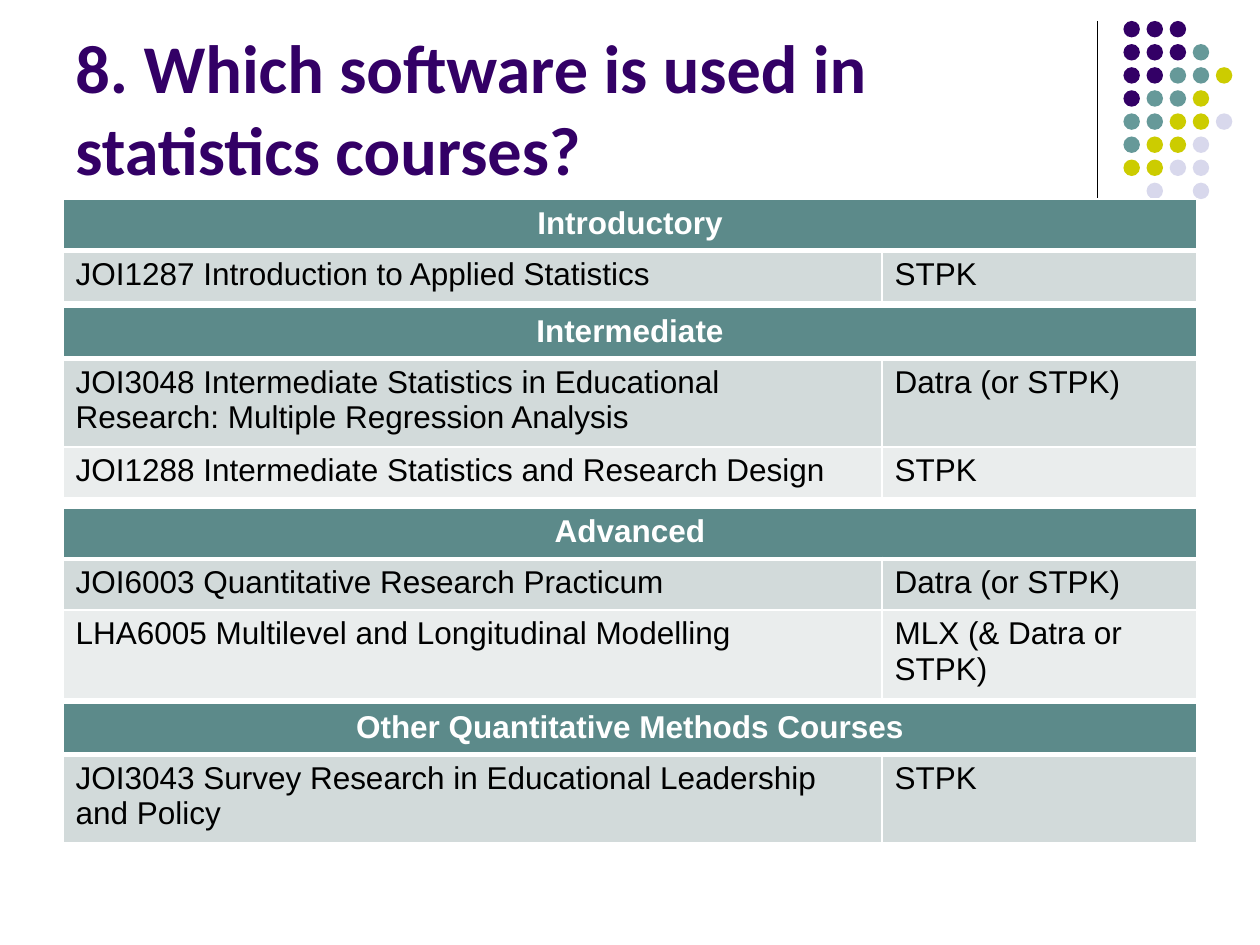
from lxml import etree
from pptx import Presentation
from pptx import util as u
from pptx.dml.color import RGBColor
from pptx.enum import shapes, text
from pptx.oxml import ns

PURPLE = RGBColor(0x33, 0x00, 0x66)
TEAL = RGBColor(0x66, 0x99, 0x99)
OLIVE = RGBColor(0xCC, 0xCC, 0x00)
LAVENDER = RGBColor(0xD8, 0xD8, 0xEC)
HEADER = RGBColor(0x5C, 0x8A, 0x8A)
BANDS = (RGBColor(0xD2, 0xDA, 0xDA), RGBColor(0xEA, 0xED, 0xED))
BLACK = RGBColor(0, 0, 0)
WHITE = RGBColor(255, 255, 255)

DOT_COLORS = {"P": PURPLE, "T": TEAL, "O": OLIVE, "L": LAVENDER}
DOT_ROWS = ("PPP", "PPPT", "PPTTO", "PTTO", "TTOOL", "TOOL", "OOLL", " L L")

COURSES = (
    (113.8, 58.3, "Introductory", (
        ("JOI1287 Introduction to Applied Statistics", "STPK"),
    )),
    (175.7, 108.7, "Intermediate", (
        ("JOI3048 Intermediate Statistics in Educational Research: "
         "Multiple Regression Analysis", "Datra (or STPK)"),
        ("JOI1288 Intermediate Statistics and Research Design", "STPK"),
    )),
    (290.2, 108.7, "Advanced", (
        ("JOI6003 Quantitative Research Practicum", "Datra (or STPK)"),
        ("LHA6005 Multilevel and Longitudinal Modelling",
         "MLX (& Datra or STPK)"),
    )),
    (401.8, 79.9, "Other Quantitative Methods Courses", (
        ("JOI3043 Survey Research in Educational Leadership and Policy",
         "STPK"),
    )),
)


def write_text(frame, content, font="Arial", size=18, color=BLACK, bold=False,
               align=text.PP_ALIGN.LEFT):
    paragraph = frame.paragraphs[0]
    paragraph.alignment = align
    run = paragraph.add_run()
    run.text = content
    run.font.name = font
    run.font.size = u.Pt(size)
    run.font.color.rgb = color
    run.font.bold = bold


def set_borders(cell, top=1, bottom=1):
    properties = cell._tc.get_or_add_tcPr()
    for side, width in (("L", 1), ("R", 1), ("T", top), ("B", bottom)):
        line = etree.SubElement(properties, ns.qn("a:ln" + side),
                                w=str(u.Pt(width)))
        fill = etree.SubElement(line, ns.qn("a:solidFill"))
        etree.SubElement(fill, ns.qn("a:srgbClr"), val=str(WHITE))


class SlideBuilder:
    title_font = "Calibri"
    row_height = 29.2
    column_widths = (468, 180)

    def __init__(self, slide):
        self.slide = slide

    def line(self, x1, y1, x2, y2):
        connector = self.slide.shapes.add_connector(
            shapes.MSO_CONNECTOR.STRAIGHT,
            u.Pt(x1), u.Pt(y1), u.Pt(x2), u.Pt(y2))
        connector.line.color.rgb = BLACK
        connector.line.width = u.Pt(0.75)
        etree.SubElement(connector._element.spPr, ns.qn("a:effectLst"))

    def dots(self, left, top, pitch, size):
        group = self.slide.shapes.add_group_shape()
        for row, codes in enumerate(DOT_ROWS):
            for column, code in enumerate(codes):
                if code == " ":
                    continue
                dot = group.shapes.add_shape(
                    shapes.MSO_SHAPE.OVAL,
                    u.Pt(left + column * pitch), u.Pt(top + row * pitch),
                    u.Pt(size), u.Pt(size))
                dot.shadow.inherit = False
                dot.fill.solid()
                dot.fill.fore_color.rgb = DOT_COLORS[code]
                dot.line.fill.background()

    def title(self, content, left, top, width, height):
        box = self.slide.shapes.add_textbox(
            u.Pt(left), u.Pt(top), u.Pt(width), u.Pt(height))
        box.text_frame.word_wrap = True
        box.text_frame.vertical_anchor = text.MSO_ANCHOR.BOTTOM
        write_text(box.text_frame, content, font=self.title_font, size=39,
                   color=PURPLE, bold=True)

    def course_table(self, left, top, height, level, courses):
        shape = self.slide.shapes.add_table(
            len(courses) + 1, 2, u.Pt(left), u.Pt(top),
            u.Pt(sum(self.column_widths)), u.Pt(height))
        table = shape.table
        for column, width in zip(table.columns, self.column_widths):
            column.width = u.Pt(width)
        for row in table.rows:
            row.height = u.Pt(self.row_height)
        shape.height = u.Pt(height)

        heading = table.cell(0, 0)
        heading.merge(table.cell(0, 1))
        write_text(heading.text_frame, level, color=WHITE, bold=True,
                   align=text.PP_ALIGN.CENTER)
        for index, row in enumerate(table.rows):
            color = BANDS[(index - 1) % 2] if index else HEADER
            for column, cell in enumerate(row.cells):
                set_borders(cell, top=3 if index == 1 else 1,
                            bottom=1 if index else 3)
                cell.fill.solid()
                cell.fill.fore_color.rgb = color
                if index:
                    write_text(cell.text_frame, courses[index - 1][column])


def main():
    presentation = Presentation()
    presentation.slide_width = u.Pt(720)
    presentation.slide_height = u.Pt(540)
    slide = presentation.slides.add_slide(presentation.slide_layouts[6])
    builder = SlideBuilder(slide)
    builder.line(627, 12, 627, 132)
    builder.dots(642, 12, 13.2, 9.4)
    builder.title("8. Which software is used in statistics courses?",
                  36, 9.4, 594, 102)
    for top, height, level, courses in COURSES:
        builder.course_table(36, top, height, level, courses)
    presentation.save("out.pptx")


if __name__ == "__main__":
    main()
